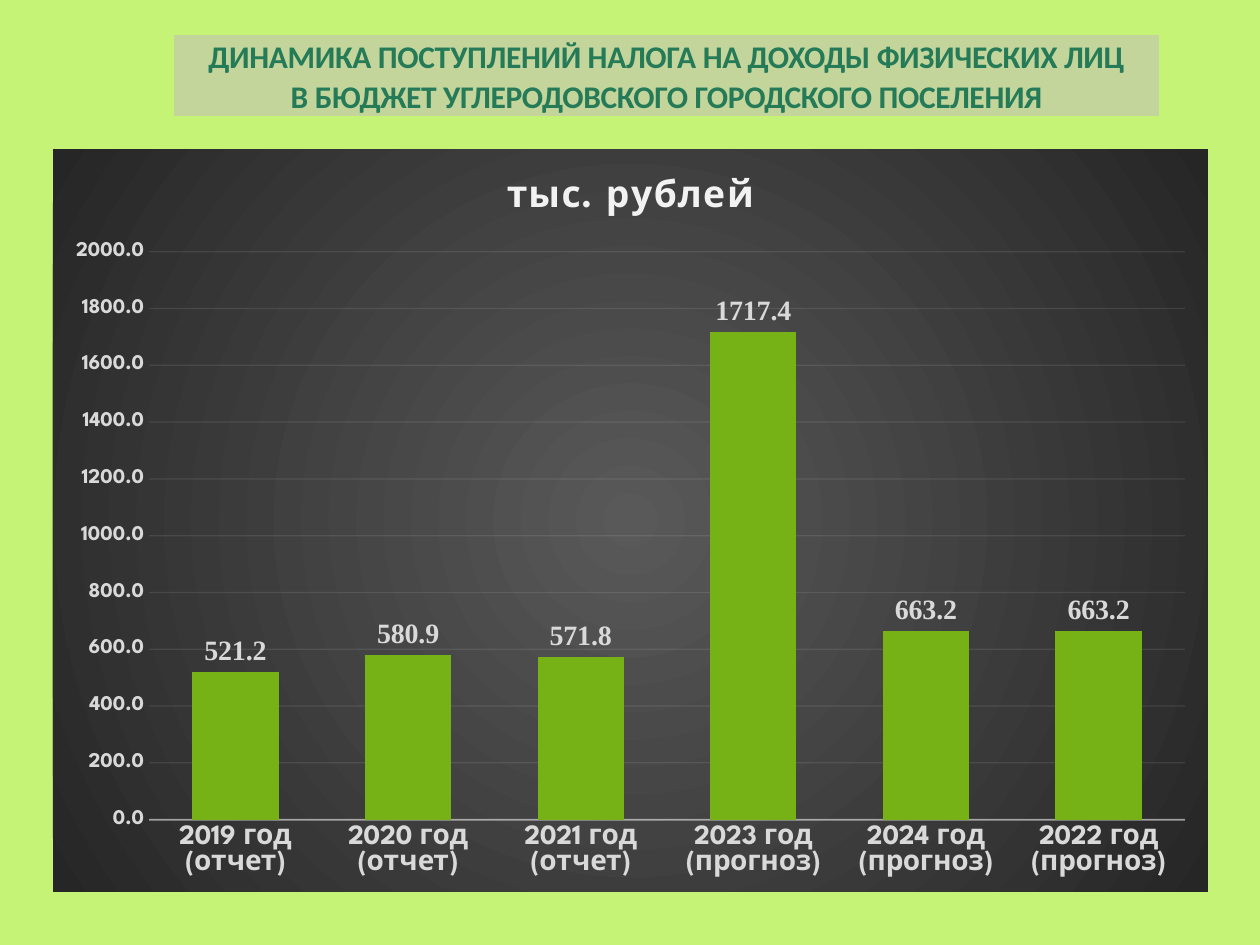
"""Build a slide charting personal income tax receipts by year."""
from dataclasses import dataclass

from lxml import etree
from pptx import Presentation
from pptx import util as u
from pptx.chart.data import CategoryChartData
from pptx.dml.color import RGBColor
from pptx.enum import chart as ch, text
from pptx.oxml import parse_xml
from pptx.oxml.ns import nsdecls, qn

EMU_PER_PX = 914400 / 126


@dataclass(frozen=True)
class Theme:
    backdrop: str = "C5F375"
    banner: str = "C3D59B"
    heading: str = "257A57"
    bar: str = "76B115"
    light: str = "F2F2F2"
    label: str = "D9D9D9"
    glow: str = "595959"
    edge: str = "262626"
    heading_font: str = "Calibri"
    chart_font: str = "League Spartan"
    value_font: str = "Times New Roman"
    heading_size: int = 18
    chart_title_size: float = 21.3
    label_size: int = 16
    scale_size: int = 12
    base_size: int = 10


def px(n):
    return u.Emu(round(n * EMU_PER_PX))


class Deck:
    def __init__(self, theme, width, height):
        self.theme = theme
        self.prs = Presentation()
        self.prs.slide_width, self.prs.slide_height = px(width), px(height)
        self.s = self.prs.slides.add_slide(self.prs.slide_layouts[5])
        self.paint(self.s.background.fill, theme.backdrop)

    def paint(self, fill, color):
        fill.solid()
        fill.fore_color.rgb = RGBColor.from_string(color)

    def style(self, font, name, size, color):
        font.name, font.size, font.bold = name, u.Pt(size), True
        font.color.rgb = RGBColor.from_string(color)

    def stroke(self, line, width, opacity):
        line.width = u.Pt(width)
        line.color.rgb = RGBColor.from_string(self.theme.light)
        color = line._get_or_add_ln().find(".//" + qn("a:srgbClr"))
        etree.SubElement(color, qn("a:alpha")).set("val", str(opacity * 1000))

    def title(self, x, y, w, h, lines):
        t = self.theme
        sp = self.s.shapes.title
        sp.left, sp.top, sp.width, sp.height = map(px, (x, y, w, h))
        self.paint(sp.fill, t.banner)
        tf = sp.text_frame
        tf.margin_left = tf.margin_right = tf.margin_bottom = 0
        tf.margin_top = px(1)
        tf.word_wrap = True
        tf.auto_size = text.MSO_AUTO_SIZE.NONE
        tf.vertical_anchor = text.MSO_ANCHOR.TOP
        tf.text = "\n".join(lines)
        for i, p in enumerate(tf.paragraphs):
            p.alignment = text.PP_ALIGN.CENTER
            p.line_spacing = 1.02
            p.space_before = u.Pt(0.7 if i else 0)
            self.style(p.font, t.heading_font, t.heading_size, t.heading)
            p._p.pPr.get_or_add_defRPr().set("spc", "-20")

    def column_chart(self, x, y, w, h, name, points):
        t = self.theme
        data = CategoryChartData(number_format="0.0")
        data.categories = [year for year, _ in points]
        data.add_series(name, [value for _, value in points])
        chart = self.s.shapes.add_chart(
            ch.XL_CHART_TYPE.COLUMN_CLUSTERED, *map(px, (x, y, w, h)), data).chart
        chart.has_legend = False
        chart.font.name, chart.font.size = t.chart_font, u.Pt(t.base_size)
        self.chart_backdrop(chart)

        chart.has_title = True
        p = chart.chart_title.text_frame.paragraphs[0]
        r = p.add_run()
        r.text = name
        self.style(p.font, t.chart_font, t.chart_title_size, t.light)
        self.style(r.font, t.chart_font, t.chart_title_size, t.light)
        r._r.get_or_add_rPr().set("spc", "100")

        plot = chart.plots[0]
        plot.gap_width, plot.overlap, plot.vary_by_categories = 100, -24, False
        self.paint(plot.series[0].format.fill, t.bar)
        plot.has_data_labels = True
        labels = plot.data_labels
        labels.show_value = True
        labels.position = ch.XL_LABEL_POSITION.OUTSIDE_END
        labels.number_format, labels.number_format_is_linked = "0.0", False
        self.style(labels.font, t.value_font, t.label_size, t.label)

        years, scale = chart.category_axis, chart.value_axis
        for axis, size in ((years, t.label_size), (scale, t.scale_size)):
            axis.major_tick_mark = axis.minor_tick_mark = ch.XL_TICK_MARK.NONE
            self.style(axis.tick_labels.font, t.chart_font, size, t.label)
        self.stroke(years.format.line, 1, 54)
        scale.minimum_scale, scale.maximum_scale, scale.major_unit = 0, 2000, 200
        scale.tick_labels.number_format = "0.0"
        scale.tick_labels.number_format_is_linked = False
        scale.format.line.fill.background()
        self.stroke(scale.major_gridlines.format.line, 0.75, 10)

    def chart_backdrop(self, chart):
        t = self.theme
        stops = "".join(
            f'<a:gs pos="{pos}"><a:srgbClr val="{color}"/></a:gs>'
            for pos, color in ((0, t.glow), (100000, t.edge)))
        fill = parse_xml(
            f'<c:spPr {nsdecls("c", "a")}><a:gradFill><a:gsLst>{stops}</a:gsLst>'
            '<a:path path="circle"><a:fillToRect l="50000" t="50000" r="50000" b="50000"/>'
            '</a:path></a:gradFill><a:ln><a:noFill/></a:ln></c:spPr>')
        chart._chartSpace.find(qn("c:txPr")).addprevious(fill)


def main():
    deck = Deck(Theme(), 1260, 945)
    deck.title(174, 35, 985, 81, [
        "ДИНАМИКА ПОСТУПЛЕНИЙ НАЛОГА НА ДОХОДЫ ФИЗИЧЕСКИХ ЛИЦ",
        "В БЮДЖЕТ УГЛЕРОДОВСКОГО ГОРОДСКОГО ПОСЕЛЕНИЯ",
    ])
    deck.column_chart(53, 149, 1155, 743, "тыс. рублей", [
        ("2019 год (отчет)", 521.2),
        ("2020 год (отчет)", 580.9),
        ("2021 год (отчет)", 571.8),
        ("2023 год (прогноз)", 1717.4),
        ("2024 год (прогноз)", 663.2),
        ("2022 год (прогноз)", 663.2),
    ])
    deck.prs.save("out.pptx")


if __name__ == "__main__":
    main()
